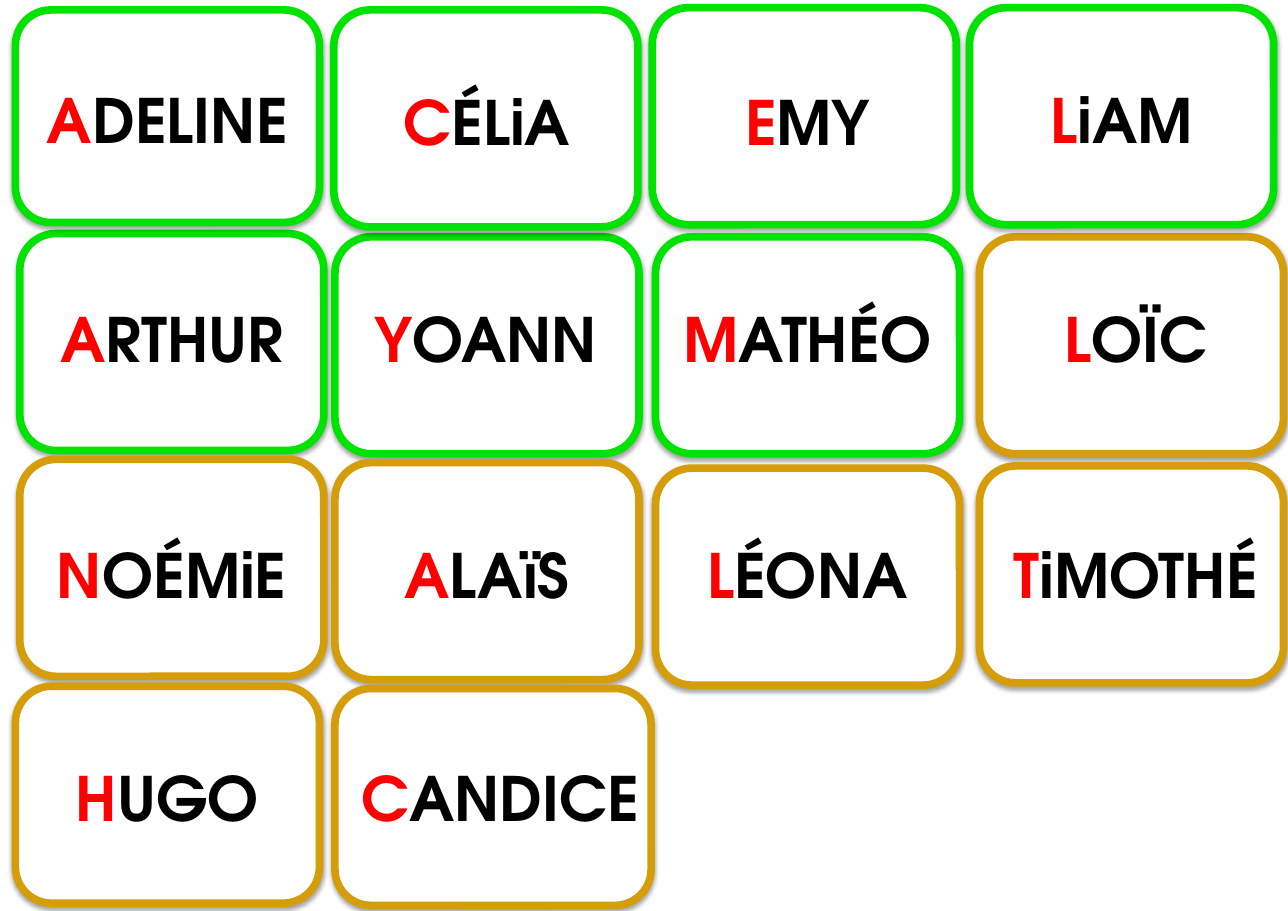
from dataclasses import dataclass

from lxml.etree import SubElement
from pptx import Presentation
from pptx.dml.color import RGBColor
from pptx.enum.shapes import MSO_SHAPE
from pptx.enum.text import MSO_AUTO_SIZE, PP_ALIGN
from pptx.oxml.ns import qn
from pptx.shapes.autoshape import Shape
from pptx.slide import Slide
from pptx.util import Inches, Pt

GREEN, GOLD = "00E300", "D59D0A"
RED, BLACK, WHITE = "FF0000", "000000", "FFFFFF"
FONT = "TeX Gyre Adventor"
CARD_WIDTH, CARD_HEIGHT, NAME_HEIGHT = 2.76, 1.97, 0.77


@dataclass(frozen=True)
class NameCard:
    name: str
    border: str
    left: float
    top: float
    name_left: float
    name_top: float
    width: float = CARD_WIDTH
    height: float = CARD_HEIGHT


# Back to front: a card's shadow falls on the cards listed before it.
CARDS = [
    NameCard("LOÏC", GOLD, 8.89, 2.15, 8.93, 2.69),
    NameCard("ARTHUR", GREEN, 0.18, 2.12, 0.18, 2.69),
    NameCard("YOANN", GREEN, 3.04, 2.15, 3.03, 2.69),
    NameCard("ADELINE", GREEN, 0.14, 0.09, 0.14, 0.7, height=1.93),
    NameCard("CÉLiA", GREEN, 3.03, 0.09, 3.04, 0.72),
    NameCard("EMY", GREEN, 5.92, 0.07, 5.95, 0.72),
    NameCard("LiAM", GREEN, 8.8, 0.07, 8.8, 0.7),
    NameCard("MATHÉO", GREEN, 5.95, 2.15, 5.95, 2.69),
    NameCard("NOÉMiE", GOLD, 0.18, 4.17, 0.18, 4.83),
    NameCard("ALAïS", GOLD, 3.04, 4.2, 3.04, 4.83),
    NameCard("LÉONA", GOLD, 5.95, 4.25, 5.95, 4.83),
    NameCard("TiMOTHÉ", GOLD, 8.89, 4.23, 8.93, 4.83),
    NameCard("HUGO", GOLD, 0.14, 6.23, 0.14, 6.85),
    NameCard("CANDICE", GOLD, 3.04, 6.25, 3.16, 6.85, width=2.87),
]


def rgb(hex_color: str) -> RGBColor:
    return RGBColor.from_string(hex_color)


def add_soft_shadow(shape: Shape) -> None:
    """Give the shape a faint shadow straight below it."""
    shape.shadow.inherit = False
    effects = shape.fill._xPr.find(qn("a:effectLst"))
    shadow = SubElement(effects, qn("a:outerShdw"), blurRad=str(Pt(3.1)),
                        dist=str(Pt(1.8)), dir="5400000", rotWithShape="0")
    color = SubElement(shadow, qn("a:srgbClr"), val=BLACK)
    SubElement(color, qn("a:alpha"), val="35000")


def draw_frame(slide: Slide, card: NameCard) -> None:
    frame = slide.shapes.add_shape(
        MSO_SHAPE.ROUNDED_RECTANGLE, Inches(card.left), Inches(card.top),
        Inches(card.width), Inches(card.height))
    frame.fill.solid()
    frame.fill.fore_color.rgb = rgb(WHITE)
    frame.line.color.rgb = rgb(card.border)
    frame.line.width = Pt(5)
    add_soft_shadow(frame)


def draw_name(slide: Slide, card: NameCard) -> None:
    """Write the first name with its initial in red."""
    label = slide.shapes.add_textbox(
        Inches(card.name_left), Inches(card.name_top),
        Inches(CARD_WIDTH), Inches(NAME_HEIGHT))
    text = label.text_frame
    text.word_wrap = True
    text.auto_size = MSO_AUTO_SIZE.SHAPE_TO_FIT_TEXT
    paragraph = text.paragraphs[0]
    paragraph.alignment = PP_ALIGN.CENTER
    for letters, color in ((card.name[0], RED), (card.name[1:], BLACK)):
        run = paragraph.add_run()
        run.text = letters
        run.font.name = FONT
        run.font.size = Pt(40)
        run.font.bold = True
        run.font.color.rgb = rgb(color)


def main() -> None:
    presentation = Presentation()
    presentation.slide_width = Inches(11.69)
    presentation.slide_height = Inches(8.27)
    slide = presentation.slides.add_slide(presentation.slide_layouts[6])
    for card in CARDS:
        draw_frame(slide, card)
    for card in CARDS:
        draw_name(slide, card)
    presentation.save("out.pptx")


if __name__ == "__main__":
    main()
